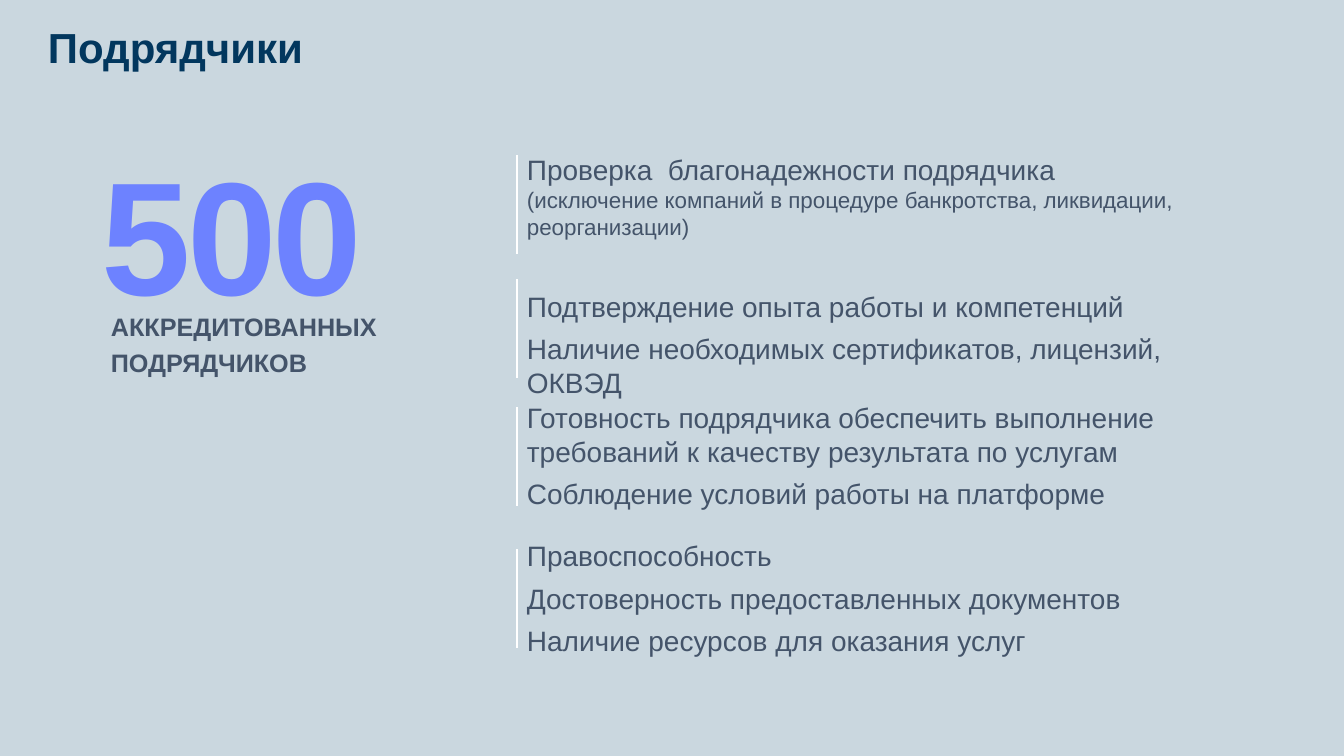
"""Build the slide about accredited contractors."""
from pptx import Presentation
from pptx.dml.color import RGBColor
from pptx.enum.shapes import MSO_CONNECTOR
from pptx.enum.text import MSO_ANCHOR as ANCHOR, PP_ALIGN as ALIGN
from pptx.oxml.ns import qn
from pptx.util import Emu, Pt

SCALE = 914400 / 100.8
SLATE = "44546A"


def px(*lengths):
    return [Emu(round(length * SCALE)) for length in lengths]


def add_text(box, lines, color, bold=False, gap=0, anchor=ANCHOR.TOP):
    shape = slide.shapes.add_textbox(*px(*box))
    frame = shape.text_frame
    frame.word_wrap = True
    frame.vertical_anchor = anchor
    frame.text = "\n".join(text for text, size in lines)
    for paragraph, (text, size) in zip(frame.paragraphs, lines):
        paragraph.space_before = paragraph.space_after = Pt(gap)
        font = paragraph.runs[0].font
        font.name, font.size, font.bold = "Arial", Pt(size), bold
        font.color.rgb = RGBColor.from_string(color)
    return frame.paragraphs[0]


presentation = Presentation()
presentation.slide_width, presentation.slide_height = px(1344, 756)
slide = presentation.slides.add_slide(presentation.slide_layouts[6])
slide.background.fill.solid()
slide.background.fill.fore_color.rgb = RGBColor.from_string("CAD7DF")

title = add_text((38, 19, 634, 58), [("Подрядчики", 30)], "02375E", bold=True)
title.line_spacing = Pt(34)

add_text((101, 306, 289, 77), [("АККРЕДИТОВАННЫХ", 18), ("ПОДРЯДЧИКОВ", 18)],
         SLATE, bold=True, gap=2, anchor=ANCHOR.MIDDLE)
count = add_text((73, 139, 318, 185), [("500", 115)], "6D82FF", bold=True, anchor=ANCHOR.MIDDLE)
count.alignment = ALIGN.CENTER
count.runs[0].font._element.set("spc", "-300")

requirements = [
    (148, 708, 99, 155, 0, [
        ("Проверка  благонадежности подрядчика", 20),
        ("(исключение компаний в процедуре банкротства, ликвидации, реорганизации)", 16)]),
    (285, 754, 87, 279, 3, [
        ("Подтверждение опыта работы и компетенций", 20),
        ("Наличие необходимых сертификатов, лицензий, ОКВЭД", 20)]),
    (396, 754, 120, 407, 3, [
        ("Готовность подрядчика обеспечить выполнение "
         "требований к качеству результата по услугам", 20),
        ("Соблюдение условий работы на платформе", 20)]),
    (534, 708, 129, 549, 3, [
        ("Правоспособность", 20),
        ("Достоверность предоставленных документов", 20),
        ("Наличие ресурсов для оказания услуг", 20)]),
]
for top, width, height, rule_top, gap, lines in requirements:
    add_text((517, top, width, height), lines, SLATE, gap=gap)
    rule = slide.shapes.add_connector(
        MSO_CONNECTOR.STRAIGHT, *px(517, rule_top, 517, rule_top + 99))
    rule.line.color.rgb = RGBColor.from_string("FFFFFF")
    rule.line.width = Pt(1.5)
    properties = rule._element.spPr
    properties.append(properties.makeelement(qn("a:effectLst"), {}))

presentation.save("out.pptx")
